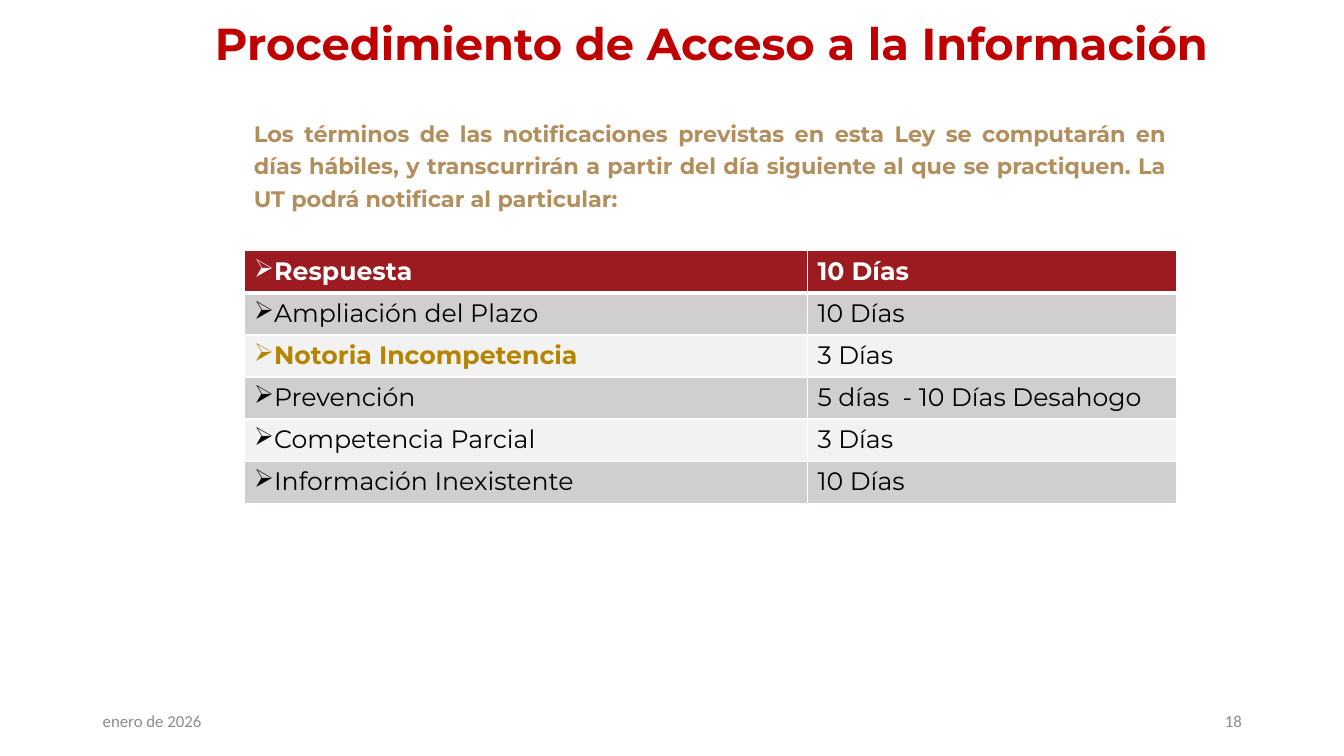
from dataclasses import dataclass

from lxml.etree import SubElement
from pptx import Presentation
from pptx.dml.color import RGBColor
from pptx.enum.text import MSO_ANCHOR as Anchor, PP_ALIGN as Align
from pptx.oxml.ns import qn
from pptx.slide import Slide
from pptx.table import _Cell as Cell
from pptx.text.text import _Paragraph as Paragraph
from pptx.util import Cm, Pt

WHITE = RGBColor(0xFF, 0xFF, 0xFF)
BLACK = RGBColor(0x00, 0x00, 0x00)
RED = RGBColor(0xC0, 0x00, 0x00)
SAND = RGBColor(0xB3, 0x8E, 0x5D)
GRAY = RGBColor(0x8C, 0x8C, 0x8C)
MAROON = RGBColor(0x9B, 0x1B, 0x20)
GOLD = RGBColor(0xB6, 0x84, 0x00)
DARK_BAND = RGBColor(0xD0, 0xCE, 0xCE)
LIGHT_BAND = RGBColor(0xF2, 0xF2, 0xF2)

TABLE_LEFT, TABLE_TOP = 6.15, 6.32
COLUMN_WIDTHS = (14.2, 9.3)
ROW_HEIGHT = 1.06
THIN, THICK = Pt(1), Pt(3)


@dataclass(frozen=True)
class Style:
    size: float
    color: RGBColor
    name: str = "Montserrat"
    bold: bool = False


@dataclass(frozen=True)
class TextBlock:
    text: str
    box: tuple[float, float, float, float]
    style: Style
    align: Align = Align.LEFT
    anchor: Anchor = Anchor.MIDDLE
    spacing: float = 1.0


@dataclass(frozen=True)
class Deadline:
    notice: str
    days: str
    notice_style: Style
    days_style: Style


HEADER = Style(18, WHITE, bold=True)
BODY = Style(18, BLACK)
HIGHLIGHT = Style(18, GOLD, bold=True)
FOOTER = Style(12, GRAY, "Calibri")

TEXT_BLOCKS = (
    TextBlock("Procedimiento de Acceso a la Información", (3.33, 0.08, 29.21, 2.16),
              Style(32, RED, bold=True), Align.CENTER, spacing=0.9),
    TextBlock("enero de 2026", (2.34, 17.65, 7.62, 1.02), FOOTER),
    TextBlock("18", (23.93, 17.65, 7.62, 1.02), FOOTER, Align.RIGHT),
    TextBlock("Los términos de las notificaciones previstas en esta Ley se computarán "
              "en días hábiles, y transcurrirán a partir del día siguiente al que se "
              "practiquen. La UT podrá notificar al particular:",
              (6.15, 2.77, 23.5, 2.64), Style(16, SAND, bold=True),
              Align.JUSTIFY, Anchor.TOP, 1.2),
)

DEADLINES = (
    Deadline("Respuesta", "10 Días", HEADER, HEADER),
    Deadline("Ampliación del Plazo", "10 Días", BODY, BODY),
    Deadline("Notoria Incompetencia", "3 Días", HIGHLIGHT, BODY),
    Deadline("Prevención", "5 días  - 10 Días Desahogo", BODY, BODY),
    Deadline("Competencia Parcial", "3 Días", BODY, BODY),
    Deadline("Información Inexistente", "10 Días", BODY, BODY),
)


def write(paragraph: Paragraph, text: str, style: Style) -> None:
    run = paragraph.add_run()
    run.text = text
    font_format = {"name": style.name, "size": Pt(style.size), "bold": style.bold}
    for attribute, value in font_format.items():
        setattr(run.font, attribute, value)
    run.font.color.rgb = style.color


def add_text(slide: Slide, block: TextBlock) -> None:
    frame = slide.shapes.add_textbox(*map(Cm, block.box)).text_frame
    frame.word_wrap = True
    frame.vertical_anchor = block.anchor
    paragraph = frame.paragraphs[0]
    paragraph.alignment = block.align
    paragraph.line_spacing = block.spacing
    write(paragraph, block.text, block.style)


def add_arrow_bullet(paragraph: Paragraph) -> None:
    properties = paragraph._p.get_or_add_pPr()
    properties.set("marL", "0")
    properties.set("indent", "0")
    SubElement(properties, qn("a:buChar"), char="➢")


def set_borders(cell: Cell, top: int, bottom: int) -> None:
    properties = cell._tc.get_or_add_tcPr()
    widths = {"a:lnL": THIN, "a:lnR": THIN, "a:lnT": top, "a:lnB": bottom}
    for side, width in widths.items():
        line = SubElement(properties, qn(side), w=str(int(width)))
        fill = SubElement(line, qn("a:solidFill"))
        SubElement(fill, qn("a:srgbClr"), val=str(WHITE))


def band_color(row: int) -> RGBColor:
    if row == 0:
        return MAROON
    return DARK_BAND if row % 2 else LIGHT_BAND


def add_deadline_table(slide: Slide) -> None:
    size = (sum(COLUMN_WIDTHS), ROW_HEIGHT * len(DEADLINES))
    table = slide.shapes.add_table(len(DEADLINES), len(COLUMN_WIDTHS),
                                   *map(Cm, (TABLE_LEFT, TABLE_TOP, *size))).table
    for column, width in zip(table.columns, COLUMN_WIDTHS):
        column.width = Cm(width)
    for row, deadline in enumerate(DEADLINES):
        table.rows[row].height = Cm(ROW_HEIGHT)
        notice, days = table.cell(row, 0), table.cell(row, 1)
        for cell in (notice, days):
            set_borders(cell, top=THICK if row == 1 else THIN,
                        bottom=THICK if row == 0 else THIN)
            cell.fill.solid()
            cell.fill.fore_color.rgb = band_color(row)
        notice_line = notice.text_frame.paragraphs[0]
        add_arrow_bullet(notice_line)
        write(notice_line, deadline.notice, deadline.notice_style)
        write(days.text_frame.paragraphs[0], deadline.days, deadline.days_style)


def main() -> None:
    deck = Presentation()
    deck.slide_width, deck.slide_height = Cm(33.87), Cm(19.05)
    slide = deck.slides.add_slide(deck.slide_layouts[6])
    for block in TEXT_BLOCKS:
        add_text(slide, block)
    add_deadline_table(slide)
    deck.save("out.pptx")


if __name__ == "__main__":
    main()
